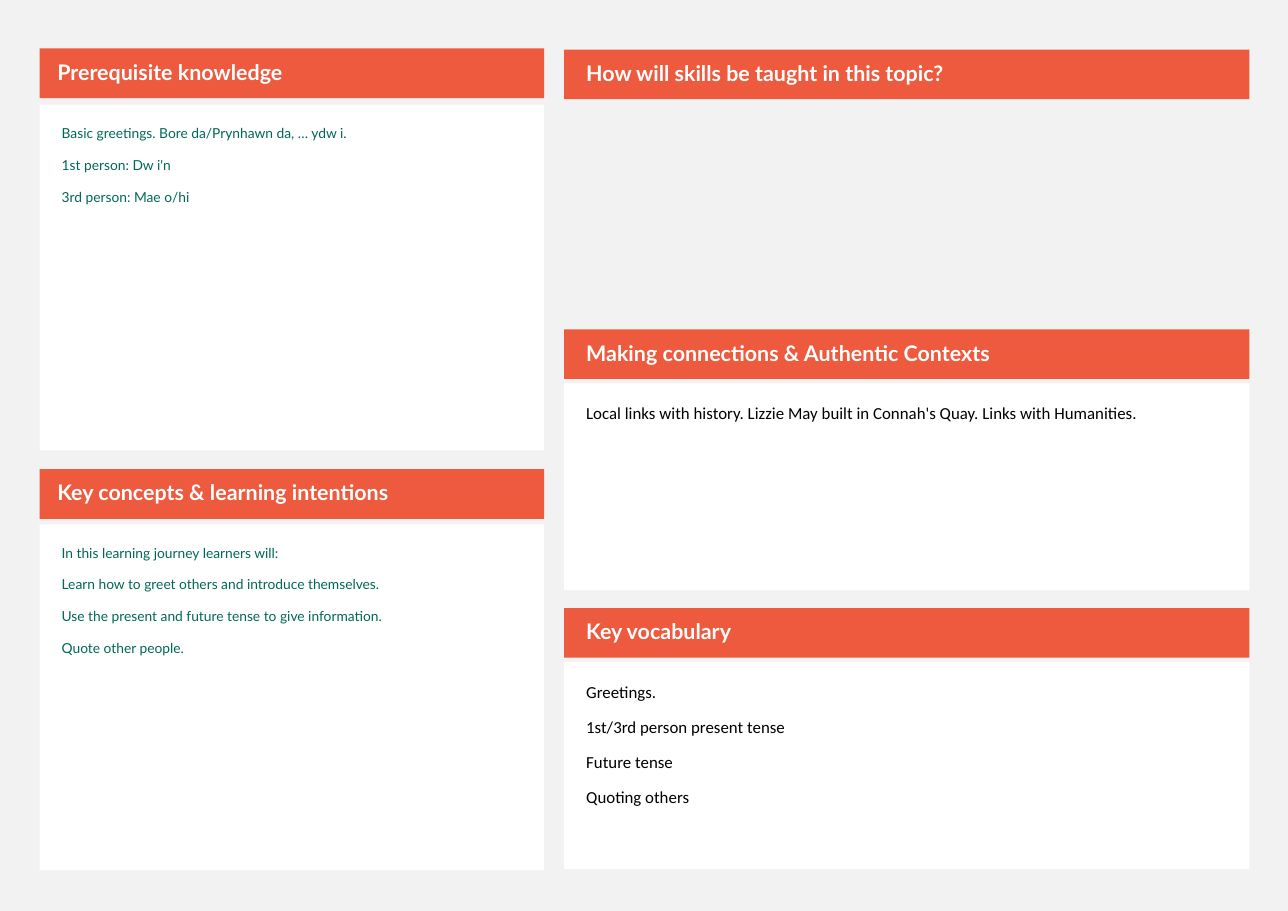
from pptx import Presentation
from pptx.dml.color import RGBColor as RGB
from pptx.enum.shapes import MSO_SHAPE as Shape
from pptx.enum.text import MSO_ANCHOR as Anchor, PP_ALIGN as Align
from pptx.util import Inches, Pt

COLORS = {
    "back": "F2F2F2",
    "head": "ED5A3E",
    "panel": "FFFFFF",
    "title": "FFFFFF",
    "green": "006758",
    "black": "000000",
}
HEAD_H = 0.45

# Column settings: place, panel height, title inset and body font
LEFT = dict(x=0.36, width=4.58, height=3.14, inset=0.16,
            font=("Lato", 9, "green"))
RIGHT = dict(x=5.12, width=6.22, height=1.88, inset=0.2,
             font=("Calibri", 11, "black"))

# Sections: column, title top, panel top, title, lines
SECTIONS = [
    (LEFT, 0.44, 0.95, "Prerequisite knowledge", [
        "Basic greetings. Bore da/Prynhawn da, … ydw i.",
        "1st person: Dw i'n",
        "3rd person: Mae o/hi",
    ]),
    (LEFT, 4.26, 4.76, "Key concepts & learning intentions", [
        "In this learning journey learners will:",
        "Learn how to greet others and introduce themselves.",
        "Use the present and future tense to give information.",
        "Quote other people.",
    ]),
    (RIGHT, 0.45, None, "How will skills be taught in this topic?", []),
    (RIGHT, 2.99, 3.48, "Making connections & Authentic Contexts", [
        "Local links with history. Lizzie May built in Connah's Quay. "
        "Links with Humanities.",
    ]),
    (RIGHT, 5.52, 6.01, "Key vocabulary", [
        "Greetings.",
        "1st/3rd person present tense",
        "Future tense",
        "Quoting others",
    ]),
]


def paint(fill, color):
    fill.solid()
    fill.fore_color.rgb = RGB.from_string(COLORS[color])


def add_box(slide, col, top, height, color, insets, anchor):
    """Add a plain filled box and return its text frame."""
    box = slide.shapes.add_shape(
        Shape.RECTANGLE, Inches(col["x"]), Inches(top),
        Inches(col["width"]), Inches(height))
    box.shadow.inherit = False
    paint(box.fill, color)
    box.line.fill.background()
    frame = box.text_frame
    frame.word_wrap = True
    frame.vertical_anchor = anchor
    (frame.margin_left, frame.margin_top,
     frame.margin_right, frame.margin_bottom) = map(Inches, insets)
    return frame


def write(frame, lines, font, bold=False):
    """Fill a text frame with one paragraph per line."""
    name, size, color = font
    for i, line in enumerate(lines):
        para = frame.add_paragraph() if i else frame.paragraphs[0]
        para.text = line
        para.alignment = Align.LEFT
        para.line_spacing = 0.9
        para.space_before = Pt(11)
        para.font.name = name
        para.font.size = Pt(size)
        para.font.bold = bold
        para.font.color.rgb = RGB.from_string(COLORS[color])


def add_head(slide, col, top, title):
    frame = add_box(slide, col, top, HEAD_H, "head",
                    (col["inset"], 0.05, 0.1, 0.05), Anchor.MIDDLE)
    write(frame, [title], ("Lato", 14, "title"), bold=True)


def add_panel(slide, col, top, lines):
    frame = add_box(slide, col, top, col["height"], "panel",
                    (0.2,) * 4, Anchor.TOP)
    write(frame, lines, col["font"])


def main():
    deck = Presentation()
    deck.slide_width = Inches(11.69)
    deck.slide_height = Inches(8.27)
    slide = deck.slides.add_slide(deck.slide_layouts[6])
    paint(slide.background.fill, "back")

    # Title bars with their text panels
    for col, top, below, title, lines in SECTIONS:
        add_head(slide, col, top, title)
        if lines:
            add_panel(slide, col, below, lines)

    deck.save("out.pptx")


if __name__ == "__main__":
    main()
